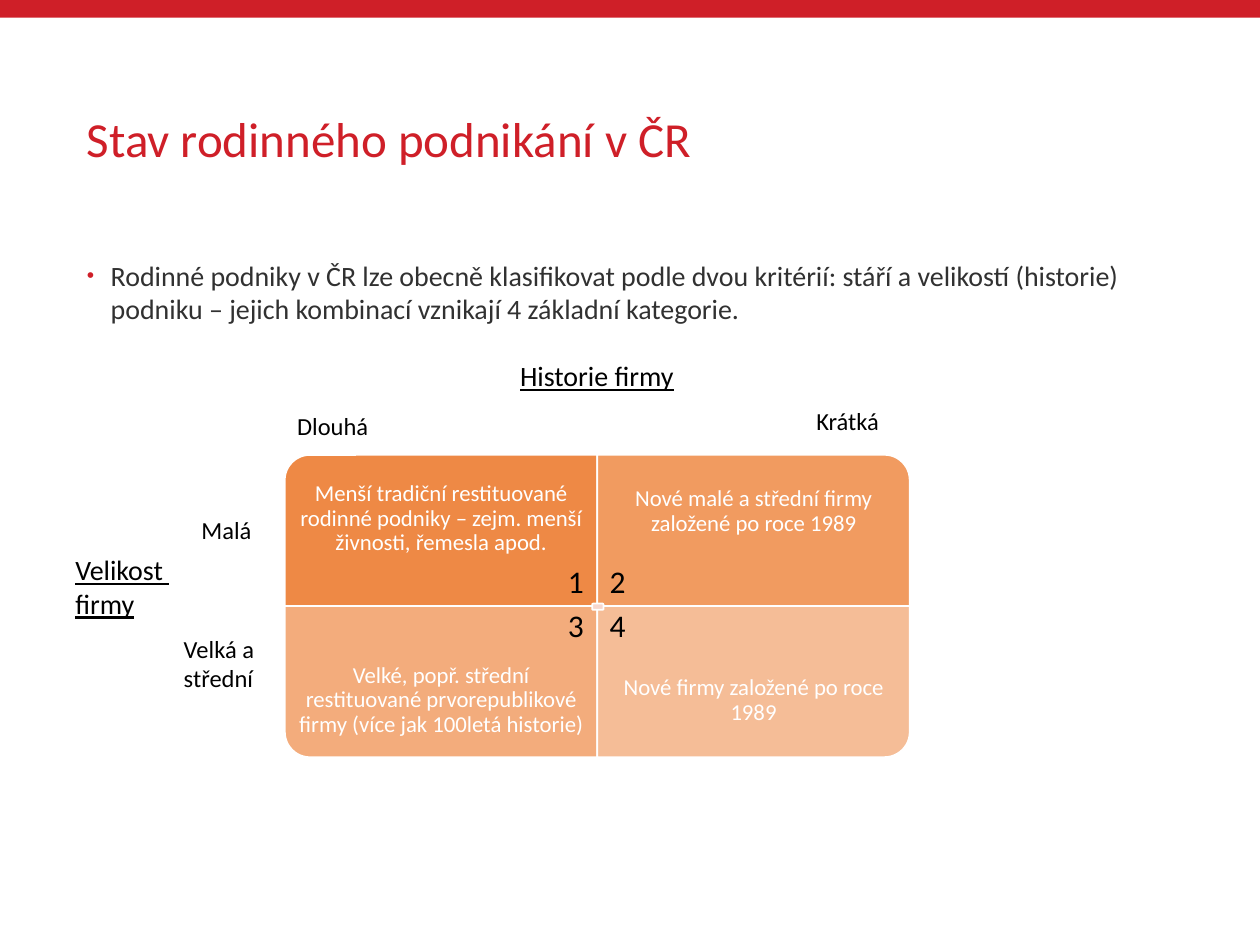
"""Build a slide on the state of family business with a two-by-two matrix."""
from dataclasses import dataclass

from lxml import etree
from pptx import Presentation
from pptx import util as u
from pptx.dml.color import RGBColor
from pptx.enum import shapes, text
from pptx.oxml.ns import qn


@dataclass(frozen=True)
class Theme:
    font: str = "Calibri"
    red: str = "CF1F28"
    body: str = "313131"
    orange: str = "ED7D31"
    hub: str = "F8D7CE"
    white: str = "FFFFFF"
    black: str = "000000"
    title_size: int = 28
    body_size: int = 16
    label_size: int = 14
    cell_size: int = 13
    number_size: int = 18


@dataclass(frozen=True)
class Box:
    left: float
    top: float
    width: float
    height: float

    def lengths(self) -> tuple:
        return tuple(u.Inches(v) for v in (self.left, self.top, self.width, self.height))


@dataclass(frozen=True)
class Label:
    words: str
    box: Box
    size: int
    underline: bool = False


@dataclass(frozen=True)
class Quadrant:
    words: str
    col: int
    row: int
    rotation: int
    opacity: int
    anchor: text.MSO_ANCHOR = text.MSO_ANCHOR.MIDDLE


T = Theme()
CELL_W, CELL_H, TEXT_H = 2.48, 1.2, 0.9
GRID_LEFT, GRID_TOP = 2.26, 3.61
MID_X, MID_Y = GRID_LEFT + CELL_W, GRID_TOP + CELL_H
NUMBER_W, NUMBER_H = 0.33, 0.4

QUADRANTS = (
    Quadrant("Menší tradiční restituované rodinné podniky – zejm. menší živnosti, řemesla apod.",
             0, 0, 270, 90, text.MSO_ANCHOR.BOTTOM),
    Quadrant("Nové malé a střední firmy založené po roce 1989", 1, 0, 0, 77),
    Quadrant("Velké, popř. střední restituované prvorepublikové firmy (více jak 100letá historie)",
             0, 1, 180, 63),
    Quadrant("Nové firmy založené po roce 1989", 1, 1, 90, 50),
)
LABELS = (
    Label("Dlouhá", Box(2.26, 3.21, 0.77, 0.34), T.label_size),
    Label("Krátká", Box(6.38, 3.17, 0.71, 0.34), T.label_size),
    Label("Historie firmy", Box(4.03, 2.8, 1.44, 0.37), T.body_size, True),
    Label("Malá", Box(1.5, 4.04, 0.61, 0.34), T.label_size),
    Label("Velká a\nstřední", Box(1.36, 4.98, 0.81, 0.57), T.label_size),
    Label("Velikost \nfirmy", Box(0.5, 4.34, 0.96, 0.64), T.body_size, True),
)


def add_text(s, words: str, box: Box, size: int, color: str, frame: dict, para: dict,
             underline: bool = False):
    """Add a text box and return its text frame."""
    tf = s.shapes.add_textbox(*box.lengths()).text_frame
    for name, value in frame.items():
        setattr(tf, name, value)
    tf.text = words
    for p in tf.paragraphs:
        for name, value in para.items():
            setattr(p, name, value)
        for r in p.runs:
            r.font.color.rgb = RGBColor.from_string(color)
            for name, value in dict(name=T.font, size=u.Pt(size),
                                    underline=underline or None).items():
                setattr(r.font, name, value)
    return tf


def add_block(s, kind: shapes.MSO_SHAPE, box: Box, fill: str, outlined: bool = True):
    """Add a filled preset shape, with a thin white outline if wanted."""
    sp = s.shapes.add_shape(kind, *box.lengths())
    sp.shadow.inherit = False
    sp.fill.solid()
    sp.fill.fore_color.rgb = RGBColor.from_string(fill)
    if outlined:
        sp.line.color.rgb = RGBColor.from_string(T.white)
        sp.line.width = u.Pt(1)
    else:
        sp.line.fill.background()
    return sp


def add_bullet(p, indent: float) -> None:
    """Give a paragraph a hanging red bullet."""
    pPr = p._p.get_or_add_pPr()
    pPr.set("marL", str(u.Inches(indent)))
    pPr.set("indent", str(-u.Inches(indent)))
    color = etree.SubElement(pPr, qn("a:buClr"))
    etree.SubElement(color, qn("a:srgbClr"), val=T.red)
    etree.SubElement(pPr, qn("a:buSzPct"), val="75000")
    etree.SubElement(pPr, qn("a:buFont"), typeface="Arial")
    etree.SubElement(pPr, qn("a:buChar"), char="•")


def add_quadrant(s, q: Quadrant) -> None:
    """Draw a translucent cell whose round corner points outwards, and its text."""
    left, top = GRID_LEFT + q.col * CELL_W, GRID_TOP + q.row * CELL_H
    w, h = (CELL_H, CELL_W) if q.rotation % 180 else (CELL_W, CELL_H)
    box = Box(left + (CELL_W - w) / 2, top + (CELL_H - h) / 2, w, h)
    sp = add_block(s, shapes.MSO_SHAPE.ROUND_1_RECTANGLE, box, T.orange)
    sp.rotation = q.rotation
    color = sp._element.spPr.find(qn("a:solidFill")).find(qn("a:srgbClr"))
    etree.SubElement(color, qn("a:alpha"), val=str(q.opacity * 1000))
    inset = u.Inches(0.1)
    frame = dict(word_wrap=True, vertical_anchor=q.anchor, margin_left=inset,
                 margin_right=inset, margin_top=inset, margin_bottom=inset)
    add_text(s, q.words, Box(left, top + q.row * (CELL_H - TEXT_H), CELL_W, TEXT_H),
             T.cell_size, T.white, frame,
             dict(alignment=text.PP_ALIGN.CENTER, line_spacing=0.9))


def add_label(s, label: Label) -> None:
    """Draw an unwrapped black label."""
    frame = dict(word_wrap=False, auto_size=text.MSO_AUTO_SIZE.SHAPE_TO_FIT_TEXT)
    add_text(s, label.words, label.box, label.size, T.black, frame, {}, label.underline)


def main() -> None:
    """Build and save the slide."""
    prs = Presentation()
    prs.slide_width, prs.slide_height = u.Inches(10), u.Inches(7.5)
    s = prs.slides.add_slide(prs.slide_layouts[6])

    add_block(s, shapes.MSO_SHAPE.RECTANGLE, Box(0, 0, 10, 0.14), T.red, False)
    add_text(s, "Stav rodinného podnikání v ČR", Box(0.59, 0.4, 8.82, 1.45), T.title_size,
             T.red, dict(word_wrap=True, vertical_anchor=text.MSO_ANCHOR.MIDDLE),
             dict(line_spacing=0.9))
    tf = add_text(s, "Rodinné podniky v ČR lze obecně klasifikovat podle dvou kritérií: stáří a "
                  "velikostí (historie) podniku – jejich kombinací vznikají 4 základní kategorie.",
                  Box(0.59, 2, 8.82, 4.46), T.body_size, T.body, dict(word_wrap=True), {})
    add_bullet(tf.paragraphs[0], 0.19)

    for q in QUADRANTS:
        add_quadrant(s, q)
    add_block(s, shapes.MSO_SHAPE.ROUNDED_RECTANGLE,
              Box(MID_X - 0.04, MID_Y - 0.02, 0.09, 0.05), T.hub)
    for label in LABELS:
        add_label(s, label)
    for i in range(4):
        row, col = divmod(i, 2)
        box = Box(MID_X - (1 - col) * NUMBER_W, 4.41 + row * 0.35, NUMBER_W, NUMBER_H)
        add_label(s, Label(str(i + 1), box, T.number_size))

    prs.save("out.pptx")


if __name__ == "__main__":
    main()
